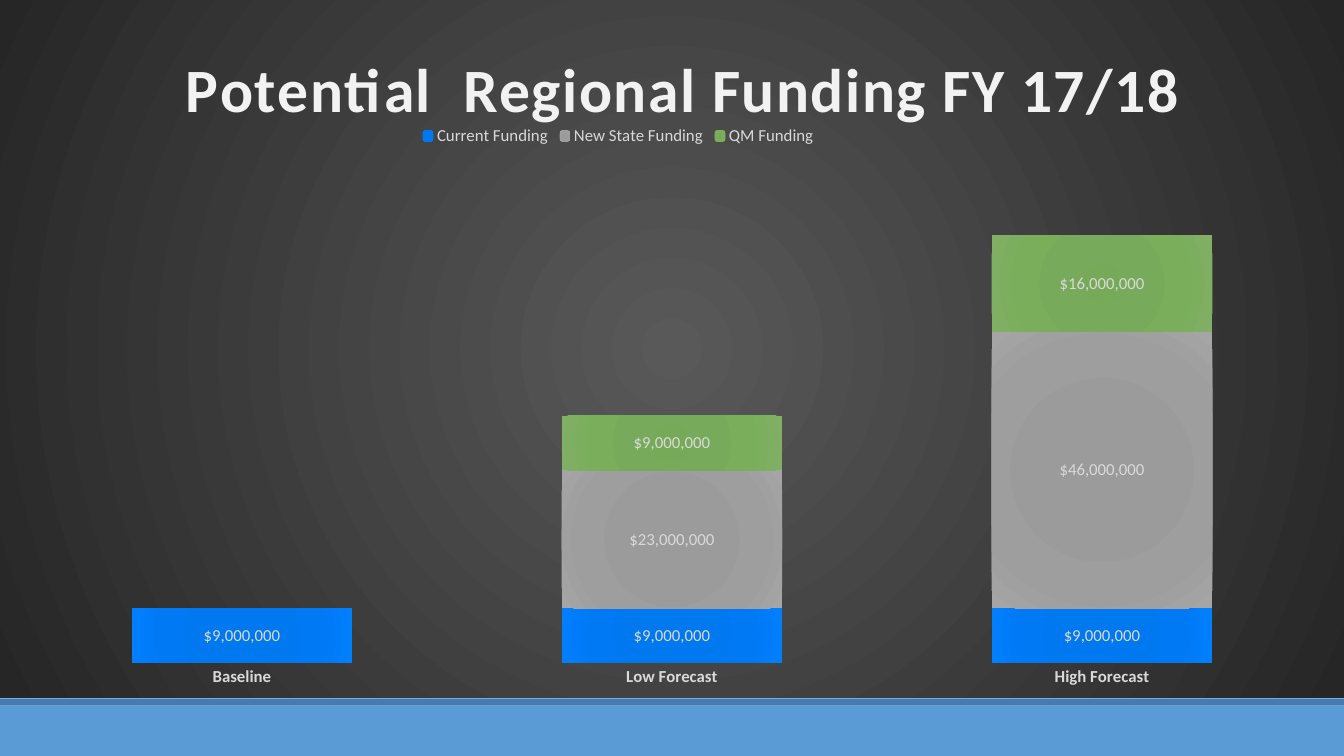
from lxml import etree
from pptx import Presentation
from pptx.chart import data as chart_data
from pptx.dml.color import RGBColor
from pptx.enum import chart as ch, shapes
from pptx.oxml import parse_xml
from pptx.oxml.ns import nsdecls, qn
from pptx.util import Inches, Pt

# Content
TITLE = "Potential  Regional Funding FY 17/18"
FORECASTS = ["Baseline", "Low Forecast", "High Forecast"]
FUNDING = {
    "Current Funding": (9_000_000, 9_000_000, 9_000_000),
    "New State Funding": (None, 23_000_000, 46_000_000),
    "QM Funding": (None, 9_000_000, 16_000_000),
}
FONT = "Calibri"
COLORS = {"band": "5B9BD5", "stripe": "457BB2", "title": "F2F2F2", "label": "D9D9D9"}
BACKDROP = {0: "595959", 100: "262626"}
GRADIENTS = {
    "Current Funding": {0: "0076EE", 34: "0078F0", 70: "0079F4", 100: "007FFF"},
    "New State Funding": {0: "9A9A9A", 34: "9B9B9B", 70: "9E9E9E", 100: "A5A5A5"},
    "QM Funding": {0: "77AA58", 34: "78AA5B", 70: "7AAE5B", 100: "81AF66"},
}
SLIDE_W, SLIDE_H = 13.33, 7.5
# Bottom bars: top, height
BARS = {"band": (7, 0.5), "stripe": (6.93, 0.07)}


def style(font, size, color, bold=False):
    font.name, font.size, font.bold = FONT, Pt(size), bold
    font.color.rgb = RGBColor.from_string(COLORS[color])


def circle_gradient(stops, inset):
    """Circular gradient fill; inset is the focus rectangle in percent."""
    marks = "".join(f'<a:gs pos="{pos * 1000}"><a:srgbClr val="{color}"/></a:gs>'
                    for pos, color in stops.items())
    edges = " ".join(f'{side}="{inset * 1000}"' for side in "ltrb")
    return parse_xml(f'<a:gradFill {nsdecls("a")} rotWithShape="1"><a:gsLst>{marks}</a:gsLst>'
                     f'<a:path path="circle"><a:fillToRect {edges}/></a:path></a:gradFill>')


def place(item, index, target=None, **fractions):
    """Give a chart item a manual layout in fractions of the chart."""
    for old in item.findall(qn("c:layout")):
        item.remove(old)
    layout = etree.Element(qn("c:layout"))
    manual = etree.SubElement(layout, qn("c:manualLayout"))
    settings = {"layoutTarget": target} if target else {}
    settings.update(xMode="edge", yMode="edge", **fractions)
    for name, value in settings.items():
        etree.SubElement(manual, qn(f"c:{name}")).set("val", str(value))
    item.insert(index, layout)


def add_bars(slide):
    for name, (top, height) in BARS.items():
        bar = slide.shapes.add_shape(shapes.MSO_SHAPE.RECTANGLE, 0, Inches(top),
                                     Inches(SLIDE_W), Inches(height))
        bar.shadow.inherit = False
        bar.fill.solid()
        bar.fill.fore_color.rgb = RGBColor.from_string(COLORS[name])
        bar.line.fill.background()


def add_funding_chart(slide):
    funding = chart_data.CategoryChartData(number_format="#,##0")
    funding.categories = FORECASTS
    for name, amounts in FUNDING.items():
        funding.add_series(name, amounts)
    chart = slide.shapes.add_chart(ch.XL_CHART_TYPE.COLUMN_STACKED, 0, 0, Inches(SLIDE_W),
                                   Inches(6.92), funding).chart
    style(chart.font, 12, "label")

    # Backdrop
    area = parse_xml(f'<c:spPr {nsdecls("c", "a")}><a:ln><a:noFill/></a:ln></c:spPr>')
    area.insert(0, circle_gradient(BACKDROP, 50))
    root = chart.element
    root.find(qn("c:chart")).addnext(area)

    # Title
    heading = chart.chart_title.text_frame
    heading.text = TITLE
    style(heading.paragraphs[0].font, 44, "title", bold=True)
    heading.paragraphs[0].font._element.set("spc", "100")
    place(root.find(".//" + qn("c:title")), 1, x=0.13, y=0.05)

    # Legend
    chart.has_legend = True
    chart.legend.position = ch.XL_LEGEND_POSITION.TOP
    chart.legend.include_in_layout = False
    style(chart.legend.font, 12, "label")
    place(root.find(".//" + qn("c:legend")), 1, x=0.31, y=0.17, w=0.3, h=0.05)

    # Axes
    forecasts, amounts = chart.category_axis, chart.value_axis
    forecasts.major_tick_mark = ch.XL_TICK_MARK.NONE
    forecasts.format.line.fill.background()
    style(forecasts.tick_labels.font, 12, "label", bold=True)
    amounts.visible = amounts.has_major_gridlines = False
    amounts.minimum_scale, amounts.maximum_scale = 0, 80_000_000

    # Columns and their labels
    plot = chart.plots[0]
    plot.gap_width, plot.overlap, plot.vary_by_categories = 95, 100, False
    place(root.find(".//" + qn("c:plotArea")), 0, "inner", x=0.02, y=0.26, w=0.96, h=0.69)
    for series in plot.series:
        series.format.line.fill.background()
        fill = circle_gradient(GRADIENTS[series.name], 100)
        series._element.find(qn("c:spPr")).insert(0, fill)
        labels = series.data_labels
        labels.show_value = True
        labels.number_format, labels.number_format_is_linked = '"$"#,##0', False
        labels.position = ch.XL_LABEL_POSITION.CENTER
        style(labels.font, 12, "label")


def main():
    deck = Presentation()
    deck.slide_width, deck.slide_height = Inches(SLIDE_W), Inches(SLIDE_H)
    slide = deck.slides.add_slide(deck.slide_layouts[6])
    add_bars(slide)
    add_funding_chart(slide)
    deck.save("out.pptx")


if __name__ == "__main__":
    main()
